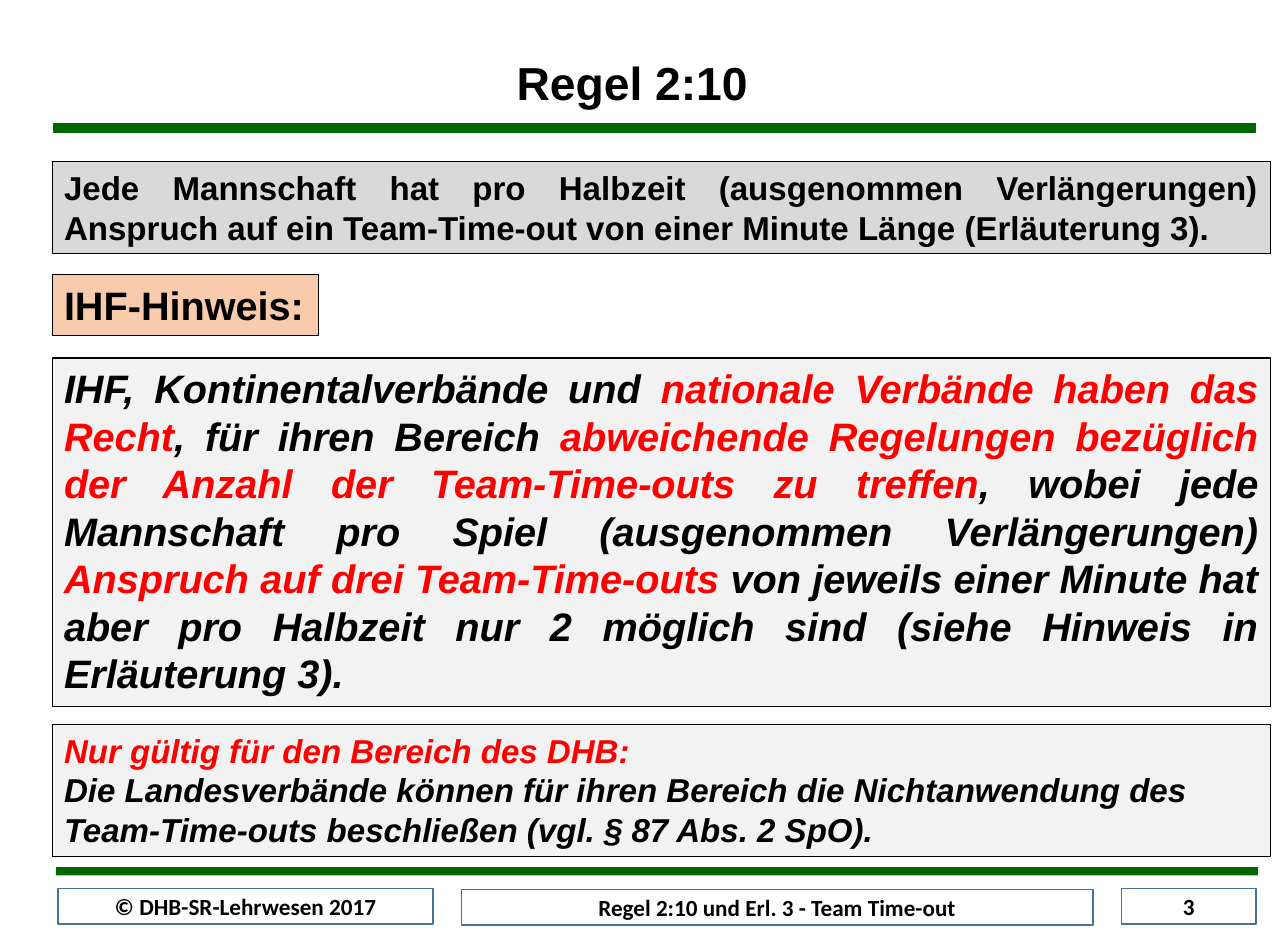
from pptx import Presentation
from pptx import util as u
from pptx.dml.color import RGBColor
from pptx.enum import shapes, text

BLACK, RED, GREEN, LIGHT = "000000", "FF0000", "006600", "F2F2F2"
LEFT, WIDTH = 0.44, 10.24

prs = Presentation()
prs.slide_width, prs.slide_height = u.Inches(10.83), u.Inches(7.92)
slide = prs.slides.add_slide(prs.slide_layouts[5])


def add_box(left, top, width, height, fill, line=None, weight=0.75):
    box = slide.shapes.add_shape(shapes.MSO_SHAPE.RECTANGLE, u.Inches(left),
                                 u.Inches(top), u.Inches(width), u.Inches(height))
    box.shadow.inherit = False
    box.fill.solid()
    box.fill.fore_color.rgb = RGBColor.from_string(fill)
    if line:
        box.line.color.rgb = RGBColor.from_string(line)
        box.line.width = u.Pt(weight)
    else:
        box.line.fill.background()
    return box


def write(box, paragraphs, size, font="Arial", italic=False, align="LEFT",
          anchor="TOP", wrap=True):
    """Each paragraph is a list of (wording, colour) pairs."""
    frame = box.text_frame
    frame.word_wrap = wrap
    frame.auto_size = text.MSO_AUTO_SIZE.NONE
    frame.vertical_anchor = text.MSO_ANCHOR[anchor]
    for number, pieces in enumerate(paragraphs):
        paragraph = frame.paragraphs[0] if number == 0 else frame.add_paragraph()
        paragraph.alignment = text.PP_ALIGN[align]
        for wording, colour in pieces:
            run = paragraph.add_run()
            run.text = wording
            run.font.name, run.font.size = font, u.Pt(size)
            run.font.bold, run.font.italic = True, italic
            run.font.color.rgb = RGBColor.from_string(colour)


# Green rules above and below the content
add_box(0.45, 1.04, 10.11, 0.07, GREEN, GREEN)
add_box(0.47, 7.29, 10.11, 0.07, GREEN)

# Footer
for left, top, width, wording in [
    (0.49, 7.47, 3.15, "© DHB-SR-Lehrwesen 2017"),
    (9.43, 7.47, 1.13, "3"),
    (3.88, 7.48, 5.31, "Regel 2:10 und Erl. 3 - Team Time-out"),
]:
    footer = add_box(left, top, width, 0.3, "FFFFFF", "43739E", 1)
    write(footer, [[(wording, BLACK)]], 14, font="Calibri", align="CENTER",
          anchor="MIDDLE")

# Title
title = slide.shapes.title
title.left, title.top = u.Inches(4.23), u.Inches(0.41)
title.width, title.height = u.Inches(2.17), u.Inches(0.57)
write(title, [[("Regel 2:10", BLACK)]], 28, align="CENTER", wrap=False)

# Rule text
rule = add_box(LEFT, 1.36, WIDTH, 0.77, "D9D9D9", BLACK)
write(rule, [[("Jede Mannschaft hat pro Halbzeit (ausgenommen Verlängerungen) "
               "Anspruch auf ein Team-Time-out von einer Minute Länge "
               "(Erläuterung 3).", BLACK)]], 20, align="JUSTIFY")

# IHF note
note_label = add_box(LEFT, 2.31, 2.24, 0.51, "F8CBAD", BLACK)
write(note_label, [[("IHF-Hinweis:", BLACK)]], 24, wrap=False)

note = add_box(LEFT, 3.01, WIDTH, 2.93, LIGHT, BLACK)
write(note, [[
    ("IHF, Kontinentalverbände und ", BLACK),
    ("nationale Verbände haben das Recht", RED),
    (", für ihren Bereich ", BLACK),
    ("abweichende Regelungen bezüglich der Anzahl der Team-Time-outs zu treffen", RED),
    (", wobei jede Mannschaft pro Spiel (ausgenommen Verlängerungen) ", BLACK),
    ("Anspruch auf drei Team-Time-outs ", RED),
    ("von jeweils einer Minute hat aber pro Halbzeit nur 2 möglich sind "
     "(siehe Hinweis in Erläuterung 3).", BLACK),
]], 24, italic=True, align="JUSTIFY")

# DHB exception
exception = add_box(LEFT, 6.09, WIDTH, 1.11, LIGHT, BLACK)
write(exception, [
    [("Nur gültig für den Bereich des DHB:", RED)],
    [("Die Landesverbände können für ihren Bereich die Nichtanwendung des", BLACK)],
    [("Team-Time-outs beschließen (vgl. § 87 Abs. 2 SpO).", BLACK)],
], 20, italic=True)

prs.save("out.pptx")
